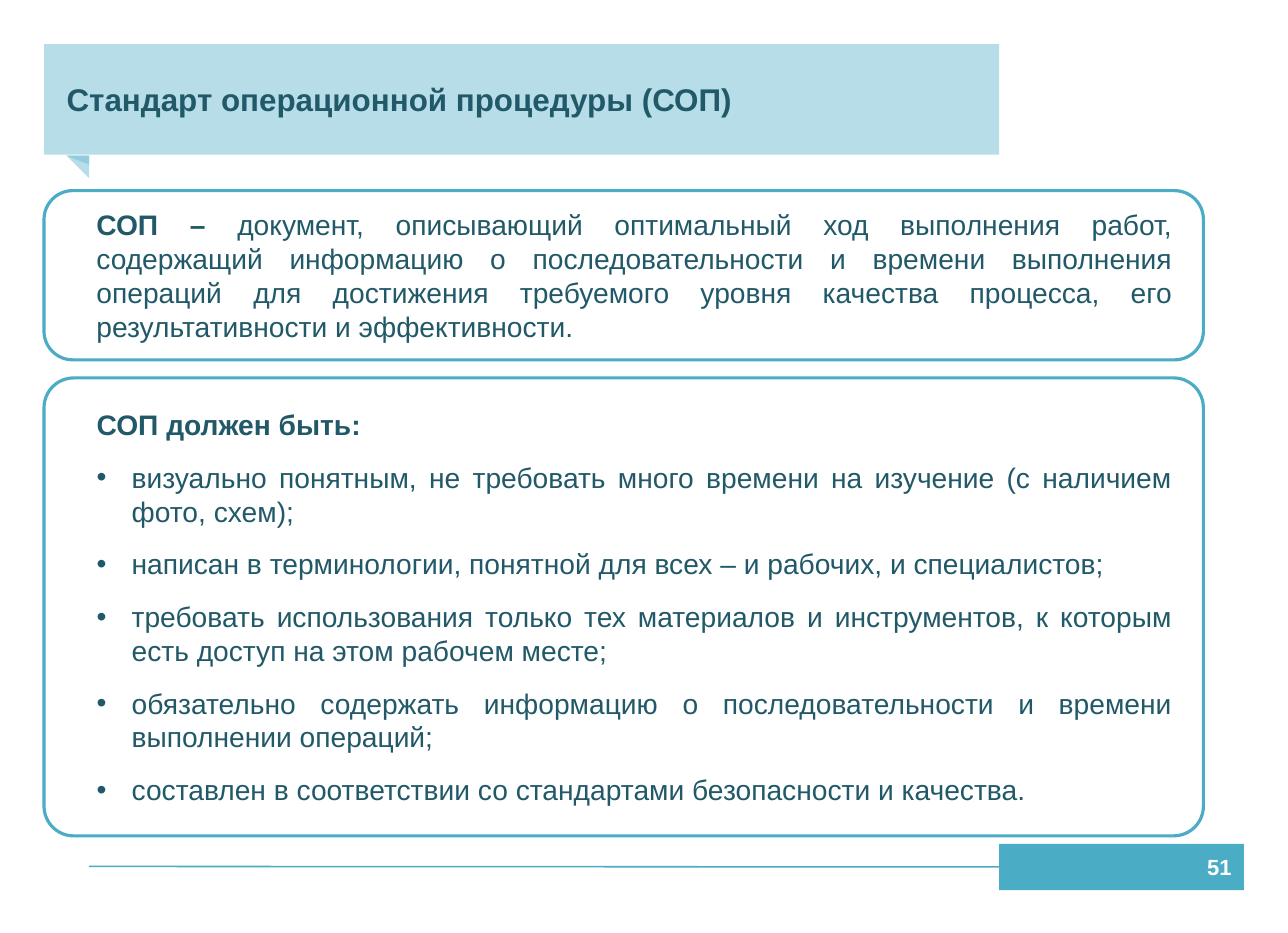
"""Build the slide about the standard operating procedure."""
from dataclasses import dataclass

from lxml import etree
from pptx import Presentation
from pptx import util as u
from pptx.dml.color import RGBColor
from pptx.enum import shapes, text
from pptx.oxml import ns

PX = 9144
FONT = "Arial"
COLORS = {
    "ink": "215968",
    "accent": "4BACC6",
    "band": "B7DEE8",
    "fold": "93CDDD",
    "white": "FFFFFF",
}
BULLET_INDENT = 31


@dataclass(frozen=True)
class Box:
    left: int
    top: int
    width: int
    height: int

    def emu(self) -> tuple[int, ...]:
        return tuple(side * PX for side in (self.left, self.top, self.width, self.height))


@dataclass(frozen=True)
class Item:
    bold: str = ""
    plain: str = ""
    bullet: bool = False


@dataclass(frozen=True)
class Panel:
    box: Box
    rounding: float
    items: tuple[Item, ...]


@dataclass(frozen=True)
class Fold:
    box: Box
    color: str


TITLE = "Стандарт операционной процедуры (СОП)"
TITLE_BOX = Box(39, 39, 847, 98)
FOLDS = (
    Fold(Box(59, 138, 20, 20), "band"),
    Fold(Box(59, 138, 20, 8), "fold"),
)
NUMBER_BOX = Box(886, 748, 217, 41)
RULE_END = (79, 768)
REQUIREMENTS = (
    "визуально понятным, не требовать много времени на изучение (с наличием фото, схем);",
    "написан в терминологии, понятной для всех – и рабочих, и специалистов;",
    "требовать использования только тех материалов и инструментов, к которым есть доступ на этом рабочем месте;",
    "обязательно содержать информацию о последовательности и времени выполнении операций;",
    "составлен в соответствии со стандартами безопасности и качества.",
)
PANELS = (
    Panel(Box(39, 169, 1028, 150), 0.17, (
        Item("СОП – ", "документ, описывающий оптимальный ход выполнения работ, содержащий "
             "информацию о последовательности и времени выполнения операций для достижения "
             "требуемого уровня качества процесса, его результативности и эффективности."),
    )),
    Panel(Box(39, 335, 1028, 406), 0.065, (
        Item(bold="СОП должен быть:"),
        *(Item(plain=requirement, bullet=True) for requirement in REQUIREMENTS),
    )),
)


def rgb(name: str) -> RGBColor:
    return RGBColor.from_string(COLORS[name])


def paint(shape, fill: str) -> None:
    shape.fill.solid()
    shape.fill.fore_color.rgb = rgb(fill)
    shape.line.fill.background()


def add_block(slide, kind, box: Box, fill: str):
    shape = slide.shapes.add_shape(kind, *box.emu())
    shape.shadow.inherit = False
    paint(shape, fill)
    return shape


def set_frame(shape, left: int, top: int, right: int, bottom: int):
    frame = shape.text_frame
    frame.word_wrap = True
    frame.auto_size = text.MSO_AUTO_SIZE.NONE
    frame.vertical_anchor = text.MSO_ANCHOR.MIDDLE
    frame.margin_left, frame.margin_top = left * PX, top * PX
    frame.margin_right, frame.margin_bottom = right * PX, bottom * PX
    return frame


def style_run(run, size: int, color: str, bold: bool) -> None:
    run.font.name = FONT
    run.font.size = u.Pt(size)
    run.font.bold = bold
    run.font.color.rgb = rgb(color)


def set_line(frame, wording: str, size: int, color: str, alignment) -> None:
    frame.text = wording
    paragraph = frame.paragraphs[0]
    paragraph.alignment = alignment
    style_run(paragraph.runs[0], size, color, True)


def add_bullet(paragraph) -> None:
    properties = paragraph._p.get_or_add_pPr()
    properties.set("marL", str(BULLET_INDENT * PX))
    properties.set("indent", str(-BULLET_INDENT * PX))
    etree.SubElement(properties, ns.qn("a:buFont")).set("typeface", FONT)
    etree.SubElement(properties, ns.qn("a:buChar")).set("char", "•")


def add_panel(slide, panel: Panel) -> None:
    shape = add_block(slide, shapes.MSO_SHAPE.ROUNDED_RECTANGLE, panel.box, "white")
    shape.adjustments[0] = panel.rounding
    shape.line.color.rgb = rgb("accent")
    shape.line.width = u.Pt(2)
    frame = set_frame(shape, 39, 0, 20, 0)
    for index, item in enumerate(panel.items):
        paragraph = frame.add_paragraph() if index else frame.paragraphs[0]
        paragraph.alignment = text.PP_ALIGN.JUSTIFY
        paragraph.space_before = paragraph.space_after = u.Pt(6)
        if item.bullet:
            add_bullet(paragraph)
        for wording, bold in ((item.bold, True), (item.plain, False)):
            if wording:
                run = paragraph.add_run()
                run.text = wording
                style_run(run, 18, "ink", bold)


def add_title(slide) -> None:
    title = slide.shapes.title
    title.left, title.top, title.width, title.height = TITLE_BOX.emu()
    paint(title, "band")
    set_line(set_frame(title, 20, 0, 10, 0), TITLE, 20, "ink", text.PP_ALIGN.LEFT)


def add_footer(slide) -> None:
    number = add_block(slide, shapes.MSO_SHAPE.RECTANGLE, NUMBER_BOX, "accent")
    set_line(set_frame(number, 11, 6, 11, 6), "51", 14, "white", text.PP_ALIGN.RIGHT)
    end_x, end_y = (value * PX for value in RULE_END)
    rule = slide.shapes.add_connector(
        shapes.MSO_CONNECTOR.STRAIGHT, number.left, end_y, end_x, end_y)
    rule.begin_connect(number, 1)
    rule.line.color.rgb = rgb("accent")
    rule.line.width = u.Pt(1)
    etree.SubElement(rule._element.spPr, ns.qn("a:effectLst"))


def main() -> None:
    presentation = Presentation()
    presentation.slide_width, presentation.slide_height = 1142 * PX, 827 * PX
    slide = presentation.slides.add_slide(presentation.slide_layouts[5])
    add_title(slide)
    for fold in FOLDS:
        triangle = add_block(slide, shapes.MSO_SHAPE.RIGHT_TRIANGLE, fold.box, fold.color)
        triangle.rotation = 180
    add_footer(slide)
    for panel in PANELS:
        add_panel(slide, panel)
    presentation.save("out.pptx")


if __name__ == "__main__":
    main()
